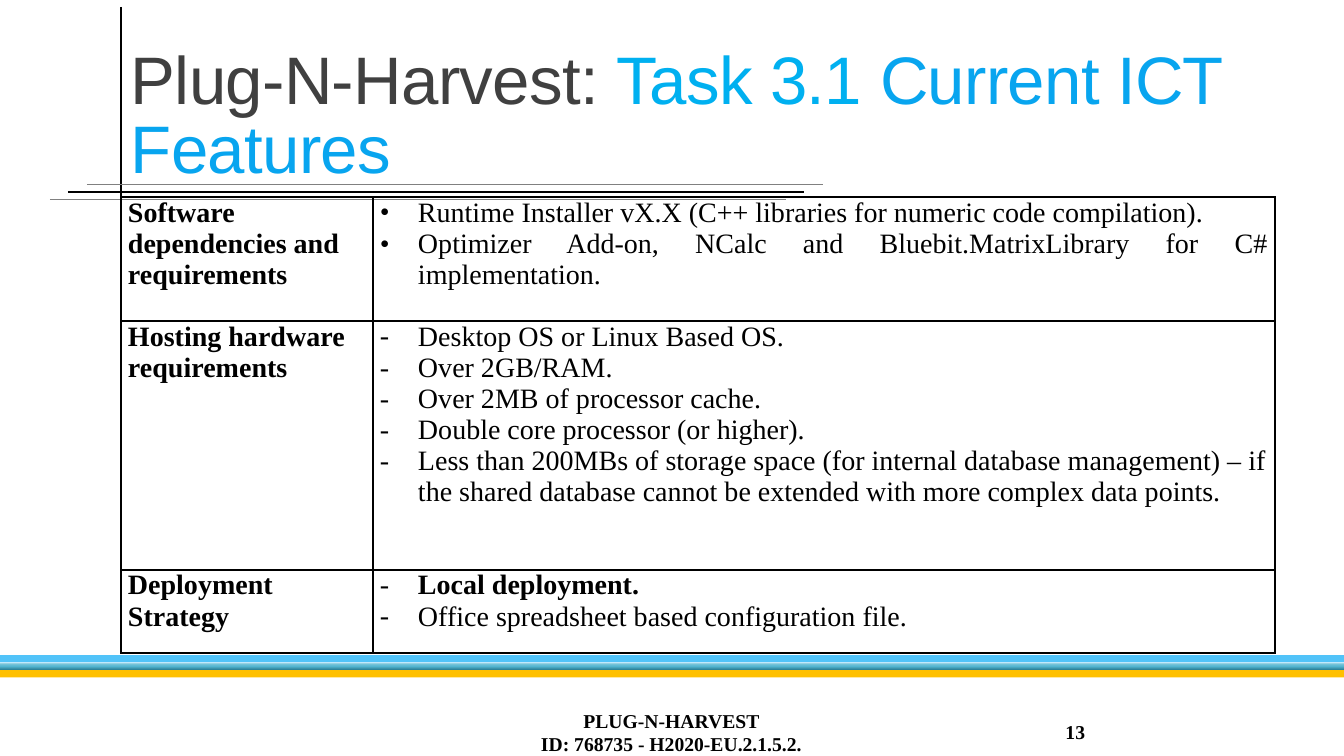
from copy import deepcopy

from lxml import etree
from pptx import Presentation
from pptx import util as u
from pptx.dml.color import RGBColor
from pptx.enum import shapes, text
from pptx.oxml.ns import qn

BLACK = RGBColor(0x00, 0x00, 0x00)
GREY = RGBColor(0x80, 0x80, 0x80)
DARK = RGBColor(0x40, 0x40, 0x40)
CYAN = RGBColor(0x00, 0xB0, 0xF0)
BLUE = RGBColor(0x08, 0xA5, 0xEF)
SKY = RGBColor(0x51, 0xC3, 0xF9)
AMBER = RGBColor(0xFF, 0xC0, 0x00)
TEAL_STOPS = [(0, RGBColor(0x29, 0x7E, 0x96)),
              (0.48, RGBColor(0x53, 0xB5, 0xD0)),
              (1, RGBColor(0x95, 0xD1, 0xE2))]
SANS, SERIF = "Arial", "Times New Roman"
ALIGN, ANCHOR = text.PP_ALIGN, text.MSO_ANCHOR

# Each row: label, bullet mark, alignment, items as (text, bold)
REQUIREMENTS = [
    ("Software dependencies and requirements", "•", ALIGN.JUSTIFY, [
        ("Runtime Installer vX.X (C++ libraries for numeric code compilation).",
         False),
        ("Optimizer Add-on, NCalc and Bluebit.MatrixLibrary for C# "
         "implementation.", False)]),
    ("Hosting hardware requirements", "-", ALIGN.LEFT, [
        ("Desktop OS or Linux Based OS.", False),
        ("Over 2GB/RAM.", False),
        ("Over 2MB of processor cache.", False),
        ("Double core processor (or higher).", False),
        ("Less than 200MBs of storage space (for internal database management) – "
         "if the shared database cannot be extended with more complex data points.",
         False)]),
    ("Deployment Strategy", "-", ALIGN.LEFT, [
        ("Local deployment.", True),
        ("Office spreadsheet based configuration file.", False)]),
]


def px(n):
    return u.Emu(round(n * 914400 / 100.8))


def write(p, words, size=20, font=SERIF, color=BLACK, bold=False, align=None,
          bullet=None, indent=38, tracking=None):
    """Add a run to a paragraph; newlines become line breaks."""
    if bullet:
        pPr = p._p.get_or_add_pPr()
        pPr.set("marL", str(px(indent)))
        pPr.set("indent", str(-px(indent)))
        etree.SubElement(pPr, qn("a:buFont")).set("typeface", SERIF)
        etree.SubElement(pPr, qn("a:buChar")).set("char", bullet)
    if align is not None:
        p.alignment = align
    for i, line in enumerate(words.split("\n")):
        if i:
            p.add_line_break()
        r = p.add_run()
        r.text = line
        r.font.size, r.font.name, r.font.bold = u.Pt(size), font, bold
        r.font.color.rgb = color
        if tracking is not None:
            r.font._element.set("spc", str(round(tracking * 100)))


def text_box(s, x, y, w, h, anchor):
    tf = s.shapes.add_textbox(px(x), px(y), px(w), px(h)).text_frame
    tf.word_wrap = True
    tf.vertical_anchor = anchor
    return tf


def add_bands(s, x, y, w, band_h):
    for i, color in enumerate([SKY, None, AMBER]):
        sp = s.shapes.add_shape(shapes.MSO_SHAPE.RECTANGLE, px(x),
                                px(y + i * band_h), px(w), px(band_h))
        sp.shadow.inherit = False
        sp.line.fill.background()
        if color is not None:
            sp.fill.solid()
            sp.fill.fore_color.rgb = color
            continue
        sp.fill.gradient()
        sp.fill.gradient_angle = 90
        stops = sp._element.spPr.find(".//" + qn("a:gsLst"))
        stops.insert(1, deepcopy(stops[0]))
        for stop, (position, rgb) in zip(sp.fill.gradient_stops, TEAL_STOPS):
            stop.position = position
            stop.color.rgb = rgb


def add_rules(s, x, y, length):
    """Three staggered horizontal rules crossed by one vertical rule."""
    for x1, y1, x2, y2, color, width in [
            (x + 18, y + 8, x + 18 + length, y + 8, BLACK, 1),
            (x + 71, y - 177, x + 71, y + 216, BLACK, 1),
            (x + 37, y, x + 37 + length, y, GREY, 0.5),
            (x, y + 15, x + length, y + 15, GREY, 0.5)]:
        rule = s.shapes.add_connector(shapes.MSO_CONNECTOR.STRAIGHT,
                                      px(x1), px(y1), px(x2), px(y2))
        rule.line.color.rgb = color
        rule.line.width = u.Pt(width)
        etree.SubElement(rule._element.spPr, qn("a:effectLst"))


def add_title(s, x, y, w, h):
    p = text_box(s, x, y, w, h, ANCHOR.BOTTOM).paragraphs[0]
    p.line_spacing = 0.85
    for words, color in [("Plug-N-Harvest: ", DARK), ("Task 3.1 ", CYAN),
                         ("Current ICT Features", BLUE)]:
        write(p, words, size=48, font=SANS, color=color, tracking=-0.5)


def add_footer(s, x, y, w, h):
    for left, width, words, align in [
            (x, 531, "PLUG-N-HARVEST\nID: 768735 - H2020-EU.2.1.5.2.", ALIGN.CENTER),
            (x + w - 144, 144, "13", ALIGN.RIGHT)]:
        tf = text_box(s, left, y, width, h, ANCHOR.MIDDLE)
        write(tf.paragraphs[0], words, size=14, bold=True, align=align)


def style_cell(cell):
    cell.margin_left = cell.margin_right = px(7)
    cell.margin_top = cell.margin_bottom = 0
    cell.fill.background()
    tcPr = cell._tc.get_or_add_tcPr()
    for i, side in enumerate(["lnL", "lnR", "lnT", "lnB"]):
        ln = etree.Element(qn("a:" + side), w=str(u.Pt(1)))
        fill = etree.SubElement(ln, qn("a:solidFill"))
        etree.SubElement(fill, qn("a:srgbClr")).set("val", str(BLACK))
        tcPr.insert(i, ln)


def add_requirements(s, x, y, w, label_w, row_heights):
    table = s.shapes.add_table(len(REQUIREMENTS), 2, px(x), px(y), px(w),
                               px(sum(row_heights))).table
    table.first_row = table.horz_banding = False
    for column, width in zip(table.columns, [label_w, w - label_w]):
        column.width = px(width)
    for row, height, (label, mark, align, items) in zip(
            table.rows, row_heights, REQUIREMENTS):
        row.height = px(height)
        name, details = row.cells
        style_cell(name)
        style_cell(details)
        write(name.text_frame.paragraphs[0], label, bold=True)
        tf = details.text_frame
        for i, (words, bold) in enumerate(items):
            p = tf.add_paragraph() if i else tf.paragraphs[0]
            write(p, words, bold=bold, align=align, bullet=mark)


def main():
    prs = Presentation()
    prs.slide_width, prs.slide_height = px(1344), px(756)
    s = prs.slides.add_slide(prs.slide_layouts[6])
    add_bands(s, 0, 655, 1344, 7.5)
    add_rules(s, 50, 184, 736)
    add_title(s, 121, 32, 1127, 160)
    add_footer(s, 406, 712, 689, 40)
    add_requirements(s, 121, 197, 1154, 252, [124, 249, 83])
    prs.save("out.pptx")


if __name__ == "__main__":
    main()
